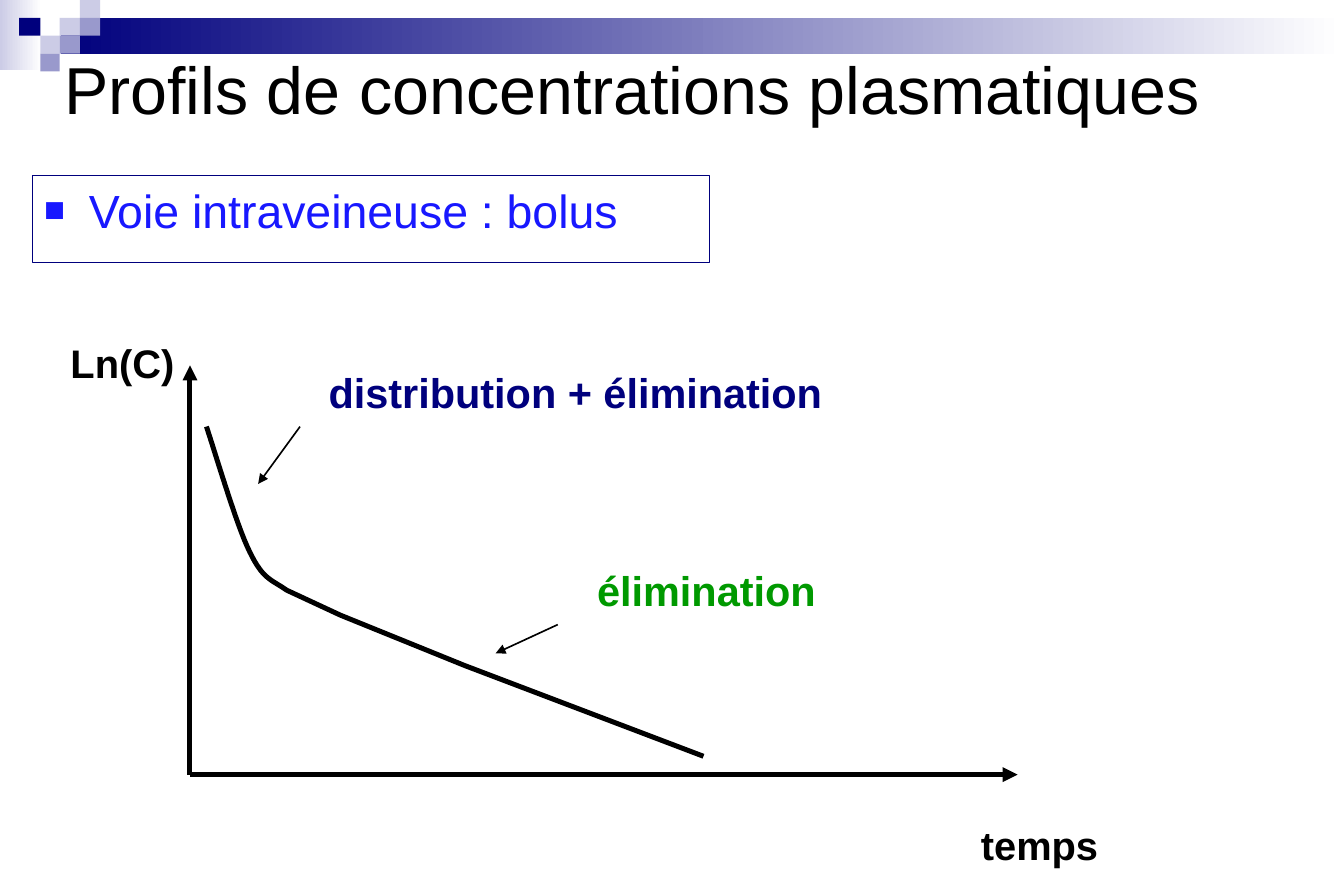
from lxml.etree import SubElement
from pptx import Presentation
from pptx.dml.color import RGBColor
from pptx.enum.shapes import MSO_CONNECTOR, MSO_SHAPE
from pptx.enum.text import MSO_ANCHOR, MSO_AUTO_SIZE, PP_ALIGN
from pptx.oxml.ns import qn
from pptx.util import Cm, Pt

BLACK = RGBColor(0x00, 0x00, 0x00)
WHITE = RGBColor(0xFF, 0xFF, 0xFF)
NAVY = RGBColor(0x00, 0x00, 0x7D)
BLUE = RGBColor(0x18, 0x18, 0xFF)
GREEN = RGBColor(0x00, 0x99, 0x00)
LAVENDER = RGBColor(0xCC, 0xCC, 0xE6)
VIOLET = RGBColor(0x99, 0x99, 0xCC)

COLUMN_EDGES = [0.41, 0.86, 1.27, 1.7, 2.13]
ROW_HEIGHT = 0.38
MOSAIC = [
    (2, 1, LAVENDER), (3, 0, LAVENDER), (3, 1, VIOLET), (1, 2, LAVENDER),
    (0, 1, NAVY), (2, 2, VIOLET), (1, 3, VIOLET),
]
ORIGIN = (4.04, 16.47)
CURVE_START = (4.39, 9.07)
CURVE_BENDS = [
    [(4.55, 9.53), (5.03, 11.18), (5.31, 11.73)],
    [(5.59, 12.32), (5.77, 12.32), (6.1, 12.55)],
]
CURVE_TAIL = [(7.24, 13.08), (9.88, 14.15), (14.96, 16.08)]


def place(shape, left, top, width, height):
    shape.left, shape.top = Cm(left), Cm(top)
    shape.width, shape.height = Cm(width), Cm(height)


def write(frame, text, size, color, bold=False, spacing=1.0, anchor=MSO_ANCHOR.TOP,
          wrap=True, margins=(0.25, 0.13)):
    frame.auto_size = MSO_AUTO_SIZE.NONE
    frame.word_wrap = wrap
    frame.vertical_anchor = anchor
    frame.margin_left = frame.margin_right = Cm(margins[0])
    frame.margin_top = frame.margin_bottom = Cm(margins[1])
    para = frame.paragraphs[0]
    para.alignment = PP_ALIGN.LEFT
    para.line_spacing = spacing
    para.space_before = Pt(0)
    span = para.add_run()
    span.text = text
    span.font.name = "Arial"
    span.font.size = Pt(size)
    span.font.bold = bold
    span.font.color.rgb = color
    return para


def add_block(page, left, top, width, height, color, fade_to=None):
    block = page.shapes.add_shape(
        MSO_SHAPE.RECTANGLE, Cm(left), Cm(top), Cm(width), Cm(height))
    block.shadow.inherit = False
    block.line.fill.background()
    if fade_to is None:
        block.fill.solid()
        block.fill.fore_color.rgb = color
    else:
        block.fill.gradient()
        block.fill.gradient_angle = 0
        for stop, shade in zip(block.fill.gradient_stops, (color, fade_to)):
            stop.color.rgb = shade


def add_banner(page):
    add_block(page, 0, 0, 0.89, 1.48, LAVENDER, fade_to=WHITE)
    add_block(page, 1.3, ROW_HEIGHT, 27.28, 2 * ROW_HEIGHT, NAVY, fade_to=WHITE)
    for column, row, color in MOSAIC:
        left, right = COLUMN_EDGES[column:column + 2]
        add_block(page, left, row * ROW_HEIGHT, right - left, ROW_HEIGHT, color)


def add_arrow(page, start, end, weight):
    arrow = page.shapes.add_connector(
        MSO_CONNECTOR.STRAIGHT, *(Cm(value) for value in (*start, *end)))
    arrow.line.color.rgb = BLACK
    arrow.line.width = Pt(weight)
    SubElement(arrow.line._get_or_add_ln(), qn("a:tailEnd"), type="triangle")
    SubElement(arrow.element.spPr, qn("a:effectLst"))


def add_label(page, text, left, top, width, height, size=24, color=BLACK, wrap=True):
    box = page.shapes.add_textbox(Cm(left), Cm(top), Cm(width), Cm(height))
    write(box.text_frame, text, size, color, bold=True, spacing=0.87, wrap=wrap,
          margins=(0.18, 0.08))


def bezier_points(start, first, second, end, steps=16):
    for step in range(1, steps + 1):
        t = step / steps
        weights = ((1 - t) ** 3, 3 * t * (1 - t) ** 2, 3 * t ** 2 * (1 - t), t ** 3)
        yield tuple(
            sum(weight * value for weight, value in zip(weights, values))
            for values in zip(start, first, second, end))


def add_curve(page):
    points = [CURVE_START]
    for bend in CURVE_BENDS:
        points.extend(bezier_points(points[-1], *bend))
    points.extend(CURVE_TAIL)
    corners = [(Cm(x), Cm(y)) for x, y in points]
    builder = page.shapes.build_freeform(*corners[0])
    builder.add_line_segments(corners[1:], close=False)
    curve = builder.convert_to_shape()
    curve.shadow.inherit = False
    curve.fill.background()
    curve.line.color.rgb = BLACK
    curve.line.width = Pt(3)


def add_square_bullet(para, color):
    properties = para._p.get_or_add_pPr()
    properties.set("marL", str(Cm(0.95)))
    properties.set("indent", str(Cm(-0.95)))
    bullet_color = SubElement(properties, qn("a:buClr"))
    SubElement(bullet_color, qn("a:srgbClr"), val=str(color))
    SubElement(properties, qn("a:buSzPct"), val="75000")
    SubElement(properties, qn("a:buFont"), typeface="Arial")
    SubElement(properties, qn("a:buChar"), char="■")


def bring_to_front(shape):
    shape.element.getparent().append(shape.element)


def fill_title(page):
    title = page.shapes.title
    place(title, 1.12, 0.71, 26.97, 2.31)
    write(title.text_frame, "Profils de concentrations plasmatiques", 40, BLACK,
          anchor=MSO_ANCHOR.MIDDLE)
    bring_to_front(title)


def fill_body(page):
    body = page.placeholders[1]
    place(body, 0.69, 3.73, 14.4, 1.85)
    body.line.color.rgb = NAVY
    body.line.width = Pt(1)
    para = write(body.text_frame, "Voie intraveineuse : bolus", 28, BLUE)
    add_square_bullet(para, BLUE)
    bring_to_front(body)


def main():
    deck = Presentation()
    deck.slide_width, deck.slide_height = Cm(28.58), Cm(19.05)
    page = deck.slides.add_slide(deck.slide_layouts[1])
    add_banner(page)
    add_arrow(page, ORIGIN, (ORIGIN[0], 7.77), 3)
    add_arrow(page, ORIGIN, (21.64, ORIGIN[1]), 3)
    add_label(page, "temps", 20.68, 17.5, 2.84, 1.02, wrap=False)
    add_label(page, "Ln(C)", 1.32, 7.26, 2.57, 1.02, wrap=False)
    add_curve(page)
    add_label(page, "distribution + élimination", 6.81, 7.87, 11.66, 1.07,
              size=25, color=NAVY)
    add_arrow(page, (6.38, 9.07), (5.49, 10.29), 1)
    add_label(page, "élimination", 12.52, 12.09, 6.45, 1.07, size=25, color=GREEN)
    add_arrow(page, (11.86, 13.28), (10.54, 13.89), 1)
    fill_title(page)
    fill_body(page)
    deck.save("out.pptx")


if __name__ == "__main__":
    main()
